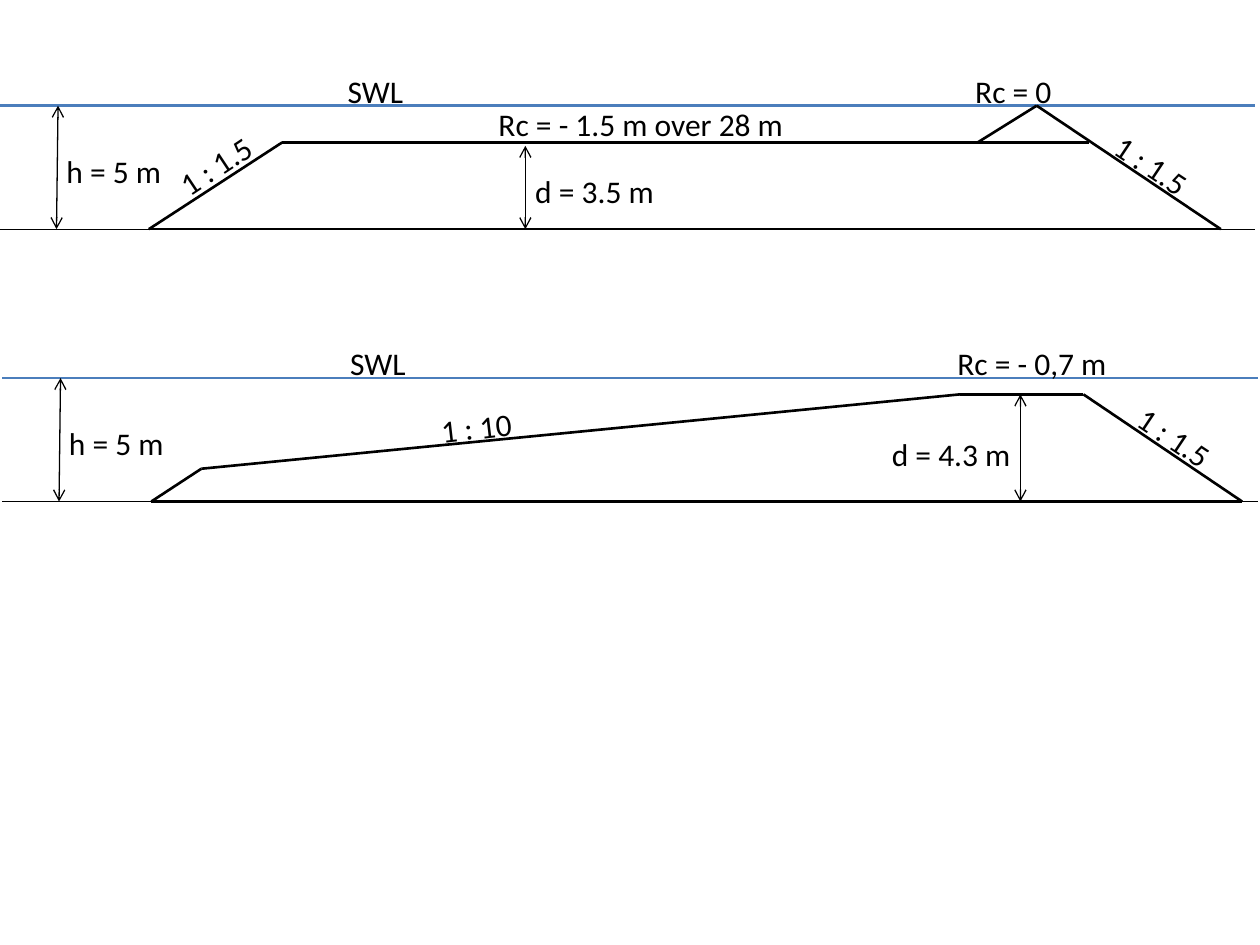
"""Build a slide with two cross-sections of a submerged breakwater."""
from dataclasses import dataclass
from itertools import pairwise

from lxml.etree import SubElement
from pptx import Presentation
from pptx.dml.color import RGBColor
from pptx.enum.shapes import MSO_CONNECTOR
from pptx.enum.text import MSO_AUTO_SIZE
from pptx.oxml.ns import qn
from pptx.util import Cm, Pt

BLACK = RGBColor(0x00, 0x00, 0x00)
WATER_BLUE = RGBColor(0x4B, 0x7E, 0xBC)
THIN, THICK = 0.75, 1.5
DEPTH = 2.49
WATER_WIDTH = 25.3
TOE = 3.0


@dataclass
class Section:
    """A group of shapes measured from the left end of its water line."""
    shapes: object
    left: float
    water: float

    def point(self, x, y):
        """Return the slide position of a point in the section."""
        return Cm(self.left + x), Cm(self.water + y)


def add_line(section, start, end, width=THICK, color=BLACK):
    """Draw a straight line without a shadow."""
    line = section.shapes.add_connector(
        MSO_CONNECTOR.STRAIGHT, *section.point(*start), *section.point(*end))
    line.line.color.rgb = color
    line.line.width = Pt(width)
    SubElement(line._element.spPr, qn("a:effectLst"))
    return line


def add_outline(section, *points):
    """Draw the heavy outline through the given points."""
    for start, end in pairwise(points):
        add_line(section, start, end)


def add_dimension(section, start, end):
    """Draw a thin line with an open arrowhead at both ends."""
    dimension = add_line(section, start, end, THIN)
    stroke = dimension.line._get_or_add_ln()
    for tag in ("a:headEnd", "a:tailEnd"):
        SubElement(stroke, qn(tag), type="arrow")


def add_label(section, text, x, y, width, rotation=0):
    """Write one unwrapped line of text."""
    label = section.shapes.add_textbox(
        *section.point(x, y), Cm(width), Cm(1.02))
    label.rotation = rotation
    frame = label.text_frame
    frame.word_wrap = False
    frame.auto_size = MSO_AUTO_SIZE.SHAPE_TO_FIT_TEXT
    run = frame.paragraphs[0].add_run()
    run.text = text
    run.font.name = "Calibri"
    run.font.size = Pt(18)
    run.font.color.rgb = BLACK


def add_section(slide, left, water):
    """Start a section with its water line, sea bed and water depth."""
    section = Section(slide.shapes.add_group_shape().shapes, left, water)
    add_line(section, (0, 0), (WATER_WIDTH, 0), THICK, WATER_BLUE)
    add_line(section, (0, DEPTH), (WATER_WIDTH, DEPTH), THIN)
    add_dimension(section, (1.17, 0), (1.14, DEPTH))
    add_label(section, "h = 5 m", 1.09, 0.81, 2.44)
    add_label(section, "SWL", 6.76, -0.81, 1.65)
    return section


def add_berm_section(slide):
    """Draw the flat berm with a crest at water level."""
    section = add_section(slide, 0, 2.13)
    berm, heel = 0.74, 24.61
    add_outline(section, (21.95, berm), (5.69, berm), (TOE, DEPTH),
                (heel, DEPTH), (20.9, 0), (19.71, berm))
    add_dimension(section, (10.59, 0.81), (10.59, DEPTH))
    add_label(section, "1 : 1.5", 3.3, 0.69, 2.11, 326.4)
    add_label(section, "1 : 1.5", 22.17, 0.69, 2.11, 33.7)
    add_label(section, "Rc = 0", 19.41, -0.81, 2.08)
    add_label(section, "Rc = - 1.5 m over 28 m", 9.8, -0.13, 6.32)
    add_label(section, "d = 3.5 m", 10.54, 1.22, 2.95)


def add_slope_section(slide):
    """Draw the gentle slope with a submerged crest."""
    section = add_section(slide, 0.05, 7.62)
    crest, heel = 0.33, 24.99
    add_outline(section, (TOE, DEPTH), (4.01, 1.83), (19.3, crest),
                (21.79, crest), (heel, DEPTH), (TOE, DEPTH))
    add_dimension(section, (20.52, crest), (20.52, DEPTH))
    add_label(section, "1 : 1.5", 22.58, 0.69, 2.11, 33.7)
    add_label(section, "Rc = - 0,7 m", 19.0, -0.81, 3.56)
    add_label(section, "d = 4.3 m", 17.68, 1.02, 2.95)
    add_label(section, "1 : 10", 8.59, 0.48, 1.96, 353.4)


def main():
    """Create and save the presentation."""
    presentation = Presentation()
    presentation.slide_width = Cm(25.4)
    presentation.slide_height = Cm(19.05)
    slide = presentation.slides.add_slide(presentation.slide_layouts[6])
    add_berm_section(slide)
    add_slope_section(slide)
    presentation.save("out.pptx")


if __name__ == "__main__":
    main()
